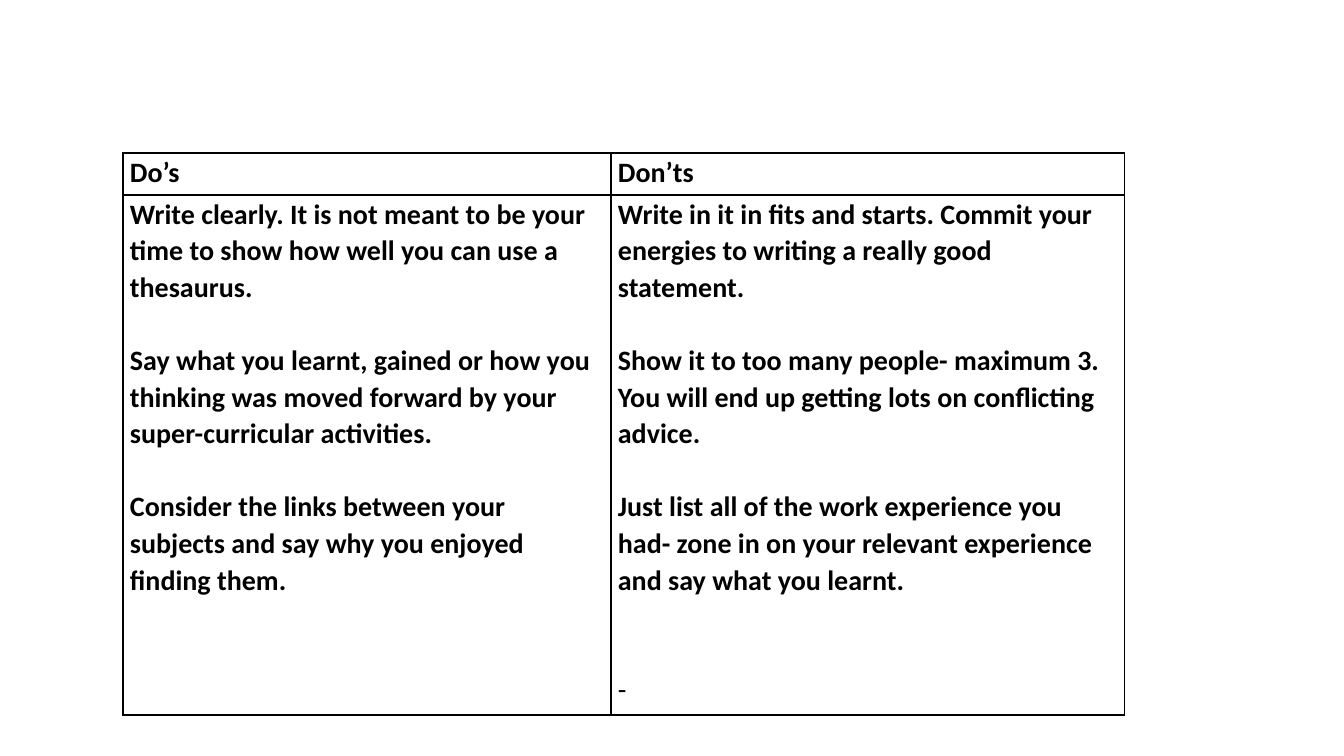
from lxml import etree
from pptx import Presentation
from pptx import util as u
from pptx.dml.color import RGBColor
from pptx.oxml.ns import qn

ROWS = [
    (["Do’s"], ["Don’ts"]),
    (
        [
            "Write clearly. It is not meant to be your time to show how well you can use a thesaurus.",
            "Say what you learnt, gained or how you thinking was moved forward by your super-curricular activities.",
            "Consider the links between your subjects and say why you enjoyed finding them.",
        ],
        [
            "Write in it in fits and starts. Commit your energies to writing a really good statement.",
            "Show it to too many people- maximum 3. You will end up getting lots on conflicting advice.",
            "Just list all of the work experience you had- zone in on your relevant experience and say what you learnt.",
            "-",
        ],
    ),
]
COL_WIDTHS = [488, 514]
ROW_HEIGHTS = [42, 520]
LEFT, TOP = 123, 153
INSET = 7
LINE_PT = 26
BLACK = "000000"


def px(n):
    return u.Emu(round(n * 914400 / 100.8))


def color(value):
    return RGBColor.from_string(value)


def add_borders(cell):
    tcPr = cell._tc.get_or_add_tcPr()
    for side in ("lnL", "lnR", "lnT", "lnB"):
        ln = etree.SubElement(tcPr, qn(f"a:{side}"), w=str(u.Pt(1)))
        fill = etree.SubElement(ln, qn("a:solidFill"))
        etree.SubElement(fill, qn("a:srgbClr"), val=BLACK)


def fill_cell(cell, lines):
    add_borders(cell)
    cell.fill.background()
    cell.margin_left = cell.margin_right = px(INSET)
    cell.margin_top = cell.margin_bottom = 0
    tf = cell.text_frame
    for i, line in enumerate(lines):
        p = tf.add_paragraph() if i else tf.paragraphs[0]
        p.text = line
        p.line_spacing = 1.07
        is_dash = line == "-"
        if i:
            p.space_before = u.Pt(LINE_PT * (2 if is_dash else 1))
        p.font.name = "Calibri"
        p.font.size = u.Pt(20)
        p.font.bold = not is_dash
        p.font.color.rgb = color(BLACK)


def main():
    prs = Presentation()
    prs.slide_width, prs.slide_height = px(1344), px(756)
    s = prs.slides.add_slide(prs.slide_layouts[6])
    table = s.shapes.add_table(
        len(ROW_HEIGHTS), len(COL_WIDTHS), px(LEFT), px(TOP),
        px(sum(COL_WIDTHS)), px(sum(ROW_HEIGHTS)),
    ).table
    table.first_row = table.horz_banding = False
    for col, width in zip(table.columns, COL_WIDTHS):
        col.width = px(width)
    for row, height, contents in zip(table.rows, ROW_HEIGHTS, ROWS):
        row.height = px(height)
        for cell, lines in zip(row.cells, contents):
            fill_cell(cell, lines)
    prs.save("out.pptx")


if __name__ == "__main__":
    main()
